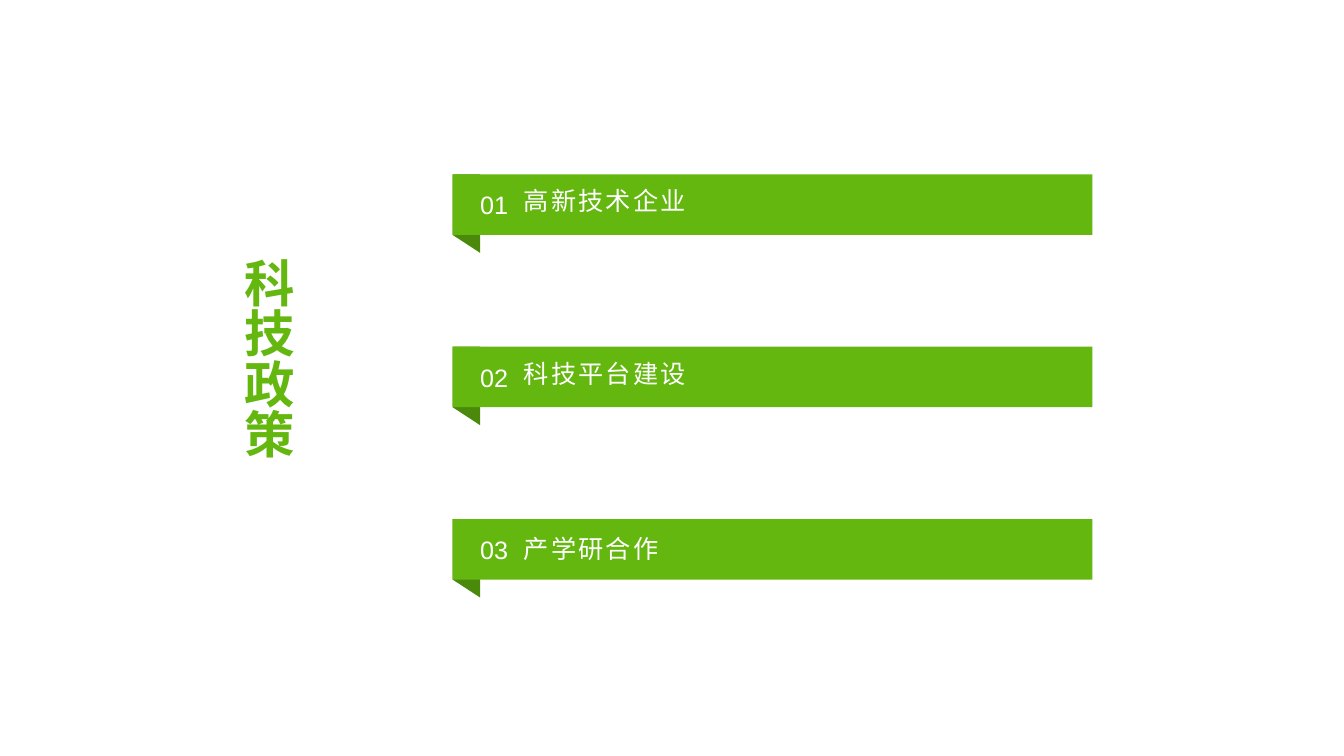
import pptx
import pptx.util
import pptx.dml.color
import pptx.enum.shapes
import pptx.enum.text
import pptx.oxml
import pptx.oxml.ns

Pt = pptx.util.Pt
RGBColor = pptx.dml.color.RGBColor
MSO_ANCHOR = pptx.enum.text.MSO_ANCHOR
PP_ALIGN = pptx.enum.text.PP_ALIGN

TITLE = "科技政策"
POLICIES = [
    ("高新技术企业", 1.0),
    ("科技平台建设", 1.0),
    ("产学研合作", 1.2),
]

GREEN = RGBColor(0x63, 0xB7, 0x0F)
DARK_GREEN = RGBColor(0x4A, 0x89, 0x0B)
WHITE = RGBColor(0xFF, 0xFF, 0xFF)
LATIN_FONT = "Arial"
CHINESE_FONT = "Noto Sans CJK SC"

BANNER_LEFT, BANNER_TOP = 323.3, 124.6
BANNER_WIDTH, BANNER_HEIGHT = 457, 43.2
BANNER_PITCH = 123.1
FOLD_WIDTH, FOLD_HEIGHT = 19.6, 56
NUMBER_WIDTH, NUMBER_HEIGHT = 37.4, 31


def set_insets(frame, left, top, right, bottom):
    frame.margin_left, frame.margin_top = Pt(left), Pt(top)
    frame.margin_right, frame.margin_bottom = Pt(right), Pt(bottom)


def write(frame, text, size, color, font, bold=False, spacing=0, line_spacing=1.0):
    frame.text = text
    paragraph = frame.paragraphs[0]
    paragraph.alignment = PP_ALIGN.LEFT
    paragraph.line_spacing = line_spacing
    run = paragraph.runs[0]
    run.font.size = Pt(size)
    run.font.bold = bold
    run.font.color.rgb = color
    run.font.name = font
    properties = run._r.get_or_add_rPr()
    if spacing:
        properties.set("spc", str(round(spacing * 100)))
    east_asian = pptx.oxml.parse_xml(
        f'<a:ea {pptx.oxml.ns.nsdecls("a")} typeface="{CHINESE_FONT}"/>'
    )
    properties.find(pptx.oxml.ns.qn("a:latin")).addnext(east_asian)


def paint(shape, color):
    shape.shadow.inherit = False
    shape.fill.solid()
    shape.fill.fore_color.rgb = color
    shape.line.fill.background()


def add_title(slide):
    title = slide.shapes.title
    title.left, title.top, title.width, title.height = Pt(162), Pt(180.7), Pt(71.3), Pt(159.1)
    frame = title.text_frame
    frame.auto_size = pptx.enum.text.MSO_AUTO_SIZE.NONE
    frame.vertical_anchor = MSO_ANCHOR.TOP
    set_insets(frame, 7.2, 3.6, 7.2, 3.6)
    frame._txBody.bodyPr.set("vert", "eaVert")
    write(frame, TITLE, 36, GREEN, CHINESE_FONT, bold=True, line_spacing=1.3)


def add_banner(slide, index, policy, line_spacing):
    top = BANNER_TOP + index * BANNER_PITCH
    shapes = slide.shapes.add_group_shape().shapes

    fold_right = BANNER_LEFT + FOLD_WIDTH
    outline = shapes.build_freeform(Pt(BANNER_LEFT), Pt(top))
    outline.add_line_segments([
        (Pt(fold_right), Pt(top)),
        (Pt(fold_right), Pt(top + FOLD_HEIGHT)),
        (Pt(BANNER_LEFT), Pt(top + BANNER_HEIGHT)),
    ])
    paint(outline.convert_to_shape(), DARK_GREEN)

    banner = shapes.add_shape(
        pptx.enum.shapes.MSO_SHAPE.RECTANGLE,
        Pt(BANNER_LEFT), Pt(top), Pt(BANNER_WIDTH), Pt(BANNER_HEIGHT),
    )
    paint(banner, GREEN)
    banner.text_frame.vertical_anchor = MSO_ANCHOR.MIDDLE
    set_insets(banner.text_frame, 51, 2.9, 2.9, 8.6)
    write(banner.text_frame, policy, 18, WHITE, LATIN_FONT,
          spacing=1.5, line_spacing=line_spacing)

    number = shapes.add_textbox(
        Pt(fold_right), Pt(top + (BANNER_HEIGHT - NUMBER_HEIGHT) / 2),
        Pt(NUMBER_WIDTH), Pt(NUMBER_HEIGHT),
    )
    number.text_frame.word_wrap = True
    number.text_frame.vertical_anchor = MSO_ANCHOR.MIDDLE
    set_insets(number.text_frame, 0, 3.6, 0, 3.6)
    write(number.text_frame, f"{index + 1:02d}", 18, WHITE, LATIN_FONT)


def main():
    presentation = pptx.Presentation()
    presentation.slide_width, presentation.slide_height = Pt(960), Pt(540)
    slide = presentation.slides.add_slide(presentation.slide_layouts[5])
    add_title(slide)
    for index, (policy, line_spacing) in enumerate(POLICIES):
        add_banner(slide, index, policy, line_spacing)
    presentation.save("out.pptx")


if __name__ == "__main__":
    main()
